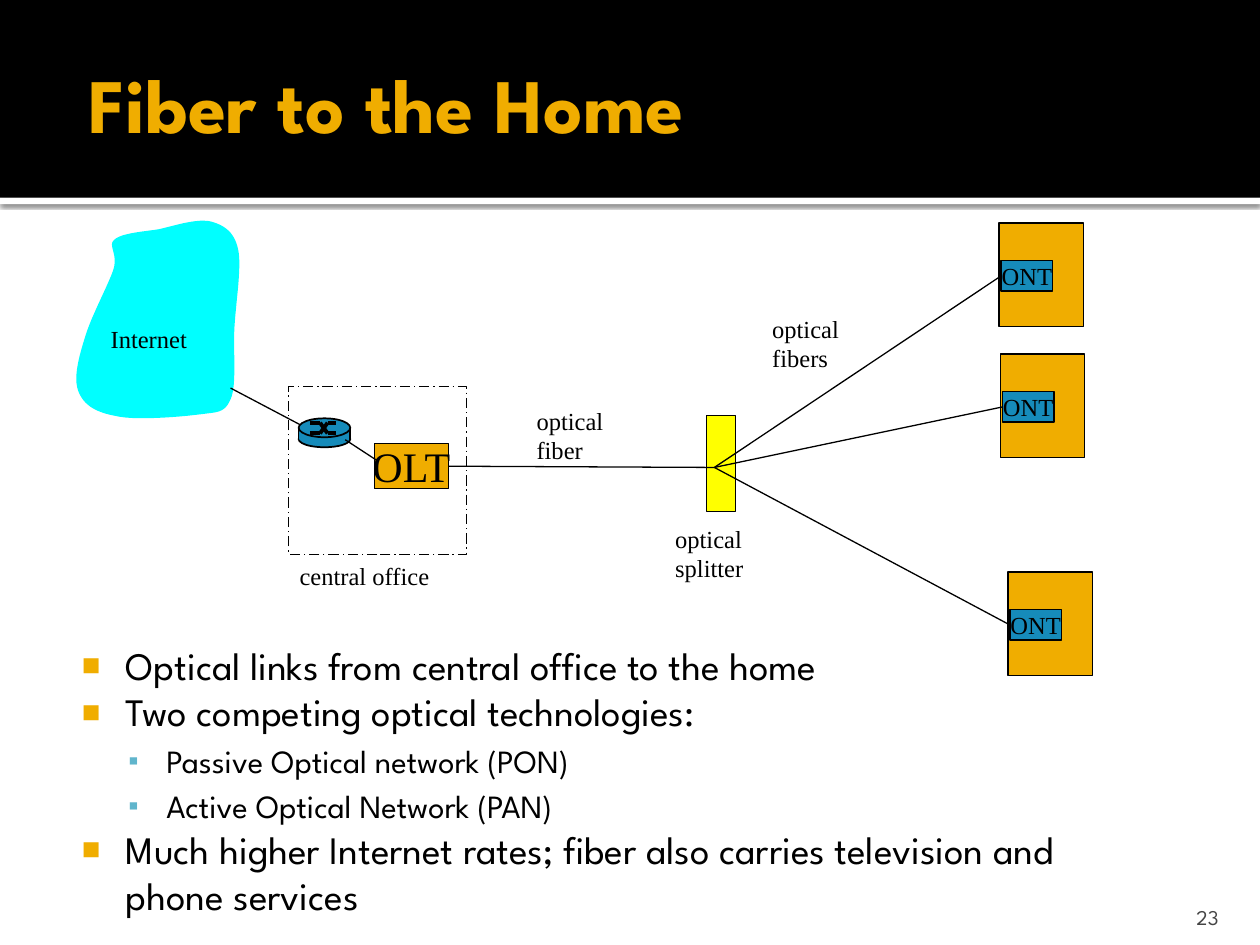
from itertools import pairwise

from lxml.etree import SubElement
from pptx import Presentation
from pptx.dml.color import RGBColor
from pptx.enum.dml import MSO_LINE
from pptx.enum.shapes import MSO_CONNECTOR, MSO_SHAPE
from pptx.enum.text import MSO_ANCHOR as ANCHOR, MSO_AUTO_SIZE as AUTO_SIZE, PP_ALIGN as ALIGN
from pptx.oxml.ns import qn
from pptx.util import Inches, Pt

BLACK = RGBColor(0, 0, 0)
WHITE = RGBColor(255, 255, 255)
AMBER = RGBColor(0xF0, 0xAD, 0x00)
BLUE = RGBColor(0x16, 0x8B, 0xBA)
SKY = RGBColor(0x60, 0xB5, 0xCC)
CYAN = RGBColor(0, 255, 255)
YELLOW = RGBColor(255, 255, 0)
GREY = RGBColor(0x45, 0x45, 0x45)
SERIF, SANS = "Times New Roman", "League Spartan"

BULLETS = (("■", AMBER, 80, 0.48, 0.35, 22.2, 0), ("▪", SKY, 90, 0.8, 0.3, 18.5, 3.7))
POINTS = (
    (0, "Optical links from central office to the home"),
    (0, "Two competing optical technologies:"),
    (1, "Passive Optical network (PON)"),
    (1, "Active Optical Network (PAN)"),
    (0, "Much higher Internet rates; fiber also carries television and phone services"),
)
LABELS = (
    ("central office", 22.8, 44, 14.7, 3.3),
    ("optical\nsplitter", 52.6, 41.1, 8.9, 5.7),
    ("optical\vfiber", 41.6, 31.7, 8.1, 5.7),
    ("optical\vfibers", 60.3, 24.4, 8.1, 5.7),
)
CLOUD_START = (18.9, 19.8)
CLOUD_CURVES = (
    ((18.6, 18.4), (17.8, 17.9), (16.8, 17.6)),
    ((15.7, 17.3), (13.9, 17.9), (12.6, 18.2)),
    ((11.3, 18.4), (9.7, 18.5), (9.1, 19)),
    ((8.5, 19.5), (9.4, 20.1), (9, 21.4)),
    ((8.6, 22.6), (7.3, 25), (6.8, 26.6)),
    ((6.3, 28.2), (5.8, 29.9), (6.2, 31)),
    ((6.6, 32.1), (7.5, 32.7), (9.1, 33)),
    ((10.6, 33.4), (14.2, 33.1), (15.8, 32.9)),
    ((17.3, 32.7), (17.8, 32.8), (18.3, 31.7)),
    ((18.8, 30.6), (18.5, 28), (18.6, 26.1)),
    ((18.7, 24.1), (19.2, 21.2), CLOUD_START),
)


def bezier(start, first, second, end, steps=12):
    """Return the points of a cubic curve after its start."""
    return [
        tuple((1 - t) ** 3 * a + 3 * t * (1 - t) ** 2 * b + 3 * t * t * (1 - t) * c + t**3 * d
              for a, b, c, d in zip(start, first, second, end))
        for t in (step / steps for step in range(1, steps + 1))
    ]


class Canvas:
    """Draw styled elements on a slide with a grid of 100 columns and 75 rows."""

    def __init__(self, slide, cell):
        self.slide, self.shapes, self.cell = slide, slide.shapes, cell

    def grid(self, *cells):
        return [round(value * self.cell) for value in cells]

    def paint(self, shape, fill, width):
        shape.shadow.inherit = False
        if fill is None:
            shape.fill.background()
        else:
            shape.fill.solid()
            shape.fill.fore_color.rgb = fill
        if width:
            shape.line.color.rgb = BLACK
            shape.line.width = Pt(width)
        else:
            shape.line.fill.background()
        return shape

    def block(self, box, fill=None, width=0.75, kind=MSO_SHAPE.RECTANGLE, text="", size=14):
        shape = self.paint(self.shapes.add_shape(kind, *self.grid(*box)), fill, width)
        if text:
            self.set_text(shape.text_frame, text, size, align=ALIGN.CENTER, anchor=ANCHOR.MIDDLE)
        return shape

    def set_text(self, frame, text, size, font=SERIF, color=BLACK, align=ALIGN.LEFT,
                 anchor=ANCHOR.TOP, wrap=False, bold=False):
        frame.text = text
        frame.word_wrap, frame.vertical_anchor = wrap, anchor
        for paragraph in frame.paragraphs:
            paragraph.alignment = align
            self.style(paragraph, size, font, color, bold)

    def style(self, paragraph, size, font, color, bold=False):
        face = paragraph.font
        face.size, face.name, face.bold = Pt(size), font, bold
        face.color.rgb = color

    def label(self, text, *box):
        frame = self.shapes.add_textbox(*self.grid(*box)).text_frame
        self.set_text(frame, text, 14)
        frame.auto_size = AUTO_SIZE.SHAPE_TO_FIT_TEXT

    def link(self, start, end, width=0.75):
        line = self.shapes.add_connector(MSO_CONNECTOR.STRAIGHT, *self.grid(*start, *end))
        line.line.color.rgb = BLACK
        line.line.width = Pt(width)
        SubElement(line.element.spPr, qn("a:effectLst"))
        return line

    def cloud(self, start, curves, fill):
        points = [start]
        for curve in curves:
            points += bezier(points[-1], *curve)
        builder = self.shapes.build_freeform(*self.grid(*points[0]))
        builder.add_line_segments([self.grid(*point) for point in points[1:]], close=True)
        self.paint(builder.convert_to_shape(), fill, 0)

    def place(self, holder, box, insets):
        holder.left, holder.top, holder.width, holder.height = self.grid(*box)
        holder.element.getparent().append(holder.element)
        frame = holder.text_frame
        frame.auto_size, frame.word_wrap = AUTO_SIZE.NONE, True
        frame.margin_left, frame.margin_top, frame.margin_right, frame.margin_bottom = map(Inches, insets)
        return frame

    def title(self, text, box):
        frame = self.place(self.shapes.title, box, (0.1, 0.05, 0.05, 0.05))
        self.set_text(frame, text, 44, SANS, AMBER, anchor=ANCHOR.MIDDLE, wrap=True, bold=True)

    def bullets(self, points, box):
        frame = self.place(self.slide.placeholders[1], box, (0.06, 0.1, 0.1, 0.05))
        frame.vertical_anchor = ANCHOR.TOP
        frame.text = "\n".join(text for _, text in points)
        for paragraph, (level, _) in zip(frame.paragraphs, points):
            mark, color, percent, margin, hang, size, gap = BULLETS[level]
            paragraph.level = level
            properties = paragraph._p.get_or_add_pPr()
            properties.set("marL", str(Inches(margin)))
            properties.set("indent", str(-Inches(hang)))
            SubElement(SubElement(properties, qn("a:buClr")), qn("a:srgbClr"), val=str(color))
            SubElement(properties, qn("a:buSzPct"), val=str(percent * 1000))
            SubElement(properties, qn("a:buChar"), char=mark)
            paragraph.space_before = Pt(gap)
            self.style(paragraph, size, SANS, BLACK)

    def number(self, text, box):
        frame = self.shapes.add_textbox(*self.grid(*box)).text_frame
        self.set_text(frame, text, 12, SANS, GREY, ALIGN.RIGHT, ANCHOR.BOTTOM, wrap=True)
        frame.margin_bottom = 0

    def header(self):
        rule = self.block((0, 15.7, 100, 0.5), WHITE, 0)
        shadow = SubElement(rule.element.spPr.find(qn("a:effectLst")), qn("a:outerShdw"),
                            blurRad=str(Pt(2.5)), dist=str(Pt(0.8)), dir="5400000")
        tint = SubElement(shadow, qn("a:srgbClr"), val=str(BLACK))
        SubElement(tint, qn("a:alpha"), val="60000")
        self.block((0, 0, 100, 15.7), BLACK, 0)

    def router(self, left, top, width):
        right = left + width
        self.block((left, top + 1, width, 1.3), BLUE, 1, MSO_SHAPE.OVAL)
        self.block((left, top + 0.9, width, 0.8), BLUE, 0)
        for side in (left, right):
            self.link((side, top + 0.7), (side, top + 1.7), 1)
        self.block((left, top, width, 1.5), BLUE, 1, MSO_SHAPE.OVAL)
        upper, lower = top + 0.35, top + 1.2
        for begin, end in ((upper, lower), (lower, upper)):
            strand = ((left + 0.9, begin), (left + 1.7, begin), (left + 2.3, end), (left + 3, end))
            for segment in pairwise(strand):
                self.link(*segment, width=2.25)


def main():
    deck = Presentation()
    deck.slide_width, deck.slide_height = Inches(10), Inches(7.5)
    canvas = Canvas(deck.slides.add_slide(deck.slide_layouts[1]), deck.slide_width / 100)
    canvas.header()
    canvas.block((56.1, 33, 2.3, 7.6), YELLOW)
    office = canvas.block((22.9, 30.7, 14.1, 13.3))
    office.line.dash_style = MSO_LINE.LONG_DASH_DOT
    terminal = canvas.block((29.7, 35.2, 5.9, 3.6), AMBER, text="OLT", size=24)
    hub = (56.7, 37.1)
    canvas.link(hub, hub).begin_connect(terminal, 3)
    for left, top in ((79.3, 17.7), (79.4, 28.1), (80, 45.4)):
        canvas.block((left, top, 6.7, 8.2), AMBER)
        unit = canvas.block((left + 0.15, top + 3, 4.1, 2.4), BLUE, text="ONT")
        canvas.link(hub, hub).end_connect(unit, 1)
    for label in LABELS:
        canvas.label(*label)
    canvas.router(23.7, 33.2, 4.1)
    canvas.link((27.4, 34.9), (30, 36.6))
    canvas.cloud(CLOUD_START, CLOUD_CURVES, CYAN)
    canvas.link((18.3, 30.8), (23.8, 33.7))
    canvas.label("Internet", 7.8, 25.2, 10, 3.3)
    canvas.title("Fiber to the Home", (6, 1.9, 85, 12.5))
    canvas.bullets(POINTS, (4.6, 49.9, 85, 22.8))
    canvas.number("23", (89.7, 70.8, 8, 3))
    deck.save("out.pptx")


if __name__ == "__main__":
    main()
